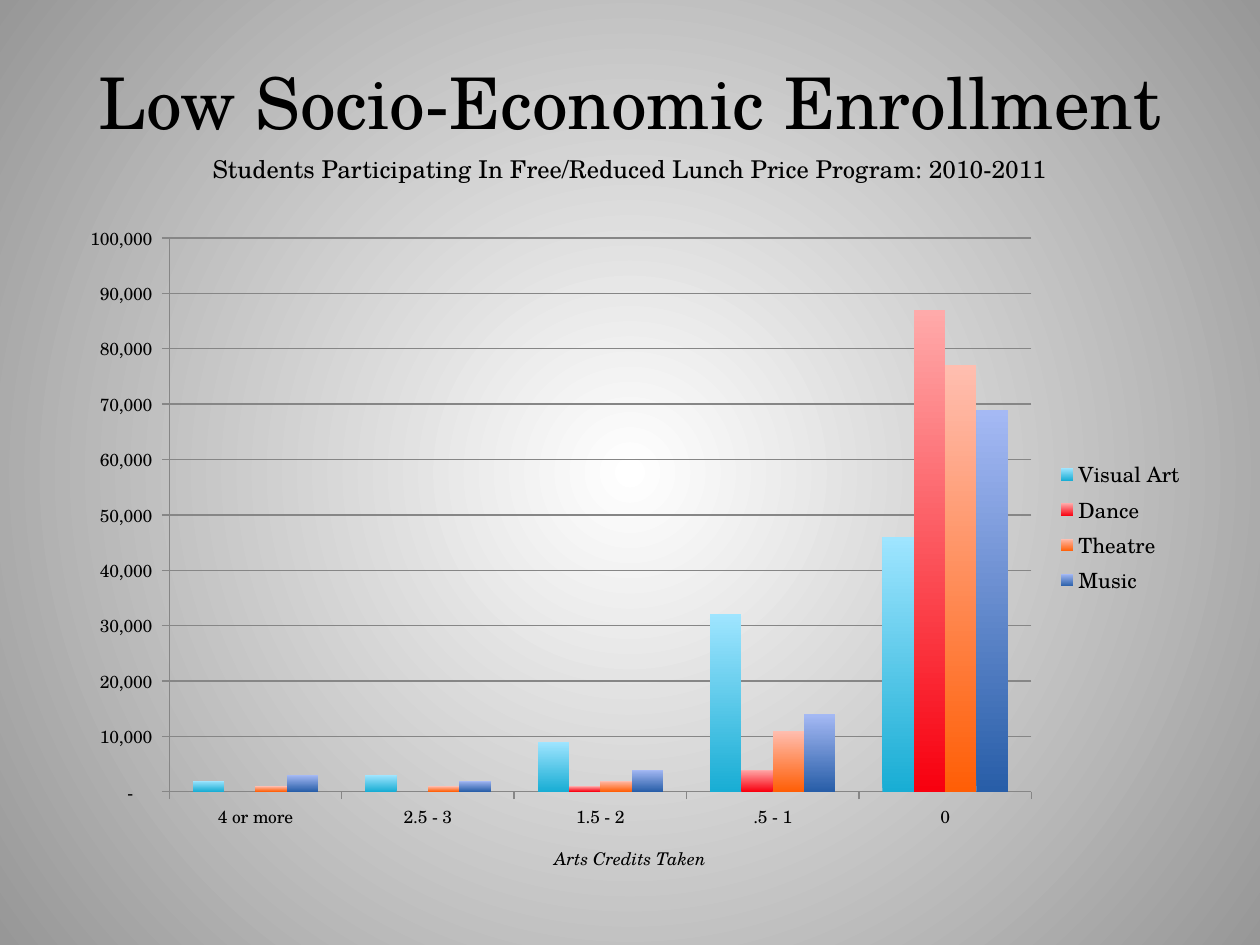
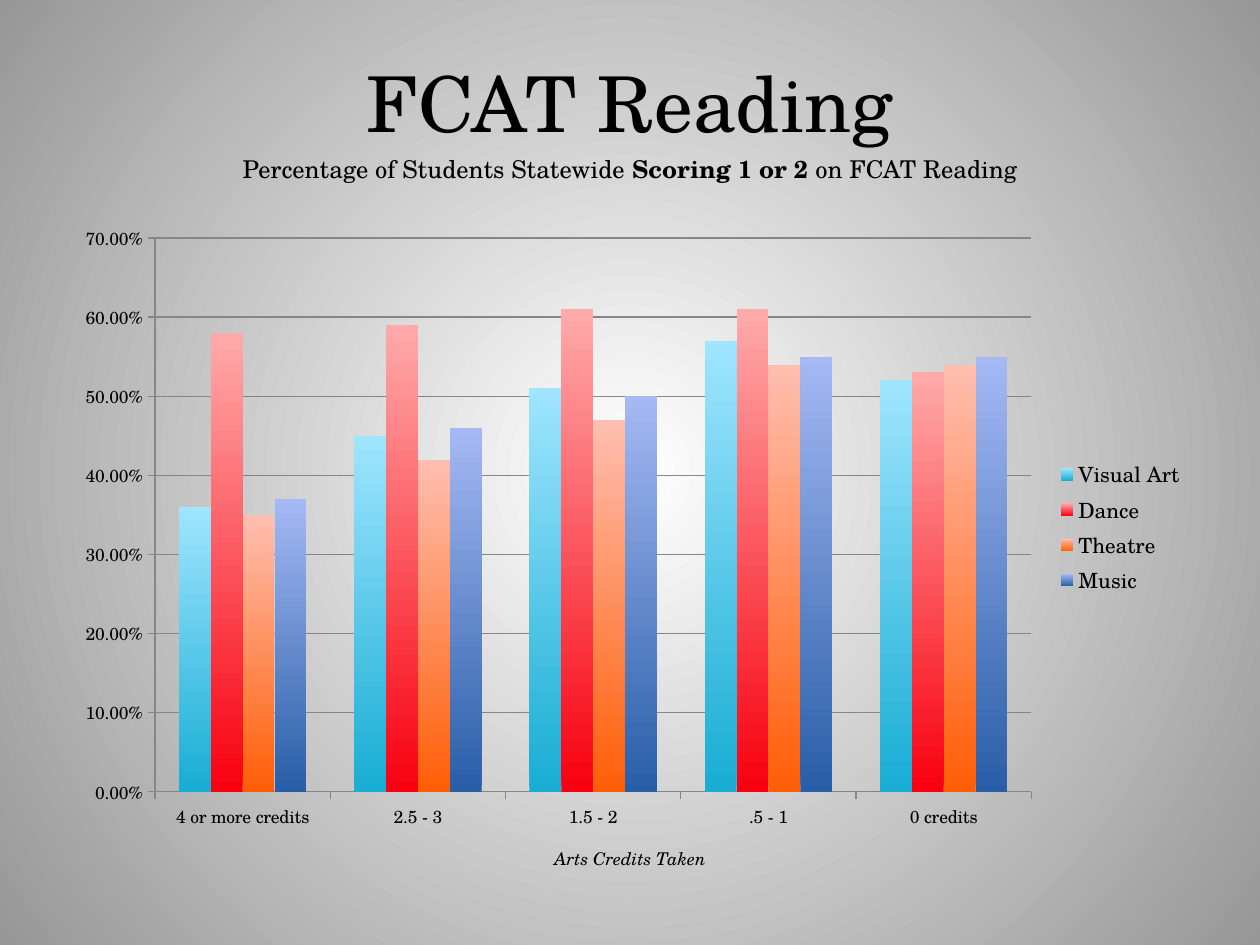
from pptx import Presentation
from pptx.chart.data import CategoryChartData as ChartData
from pptx.dml.color import RGBColor as Color
from pptx.enum.chart import XL_CHART_TYPE as ChartType
from pptx.enum.chart import XL_LEGEND_POSITION as LegendPosition
from pptx.enum.chart import XL_TICK_MARK as TickMark
from pptx.enum.text import MSO_ANCHOR as Anchor
from pptx.enum.text import PP_ALIGN as Align
from pptx.oxml import parse_xml
from pptx.oxml.ns import nsdecls
from pptx.util import Inches, Pt

FONT = "TeX Gyre Schola"
COLORS = {"text": "000000", "line": "868686", "center": "FFFFFF", "edge": "979797"}
# Bottom and top colour of the columns of each art
ART_COLORS = {
    "Visual Art": ("18ADD4", "9FE5FF"),
    "Dance": ("F8000F", "FFAAAA"),
    "Theatre": ("FF5E06", "FFBEB0"),
    "Music": ("285EA8", "A5B9F4"),
}


class ChartDeck:
    """Holds the shared style and the current slide."""

    def __init__(self):
        self.deck = Presentation()
        self.deck.slide_width = Inches(10)
        self.deck.slide_height = Inches(7.5)
        self.page = None

    def add_page(self):
        self.page = self.deck.slides.add_slide(self.deck.slide_layouts[6])
        background = parse_xml(
            f'<p:bg {nsdecls("p", "a")}><p:bgPr><a:gradFill rotWithShape="1"><a:gsLst>'
            f'<a:gs pos="0"><a:srgbClr val="{COLORS["center"]}"/></a:gs>'
            f'<a:gs pos="100000"><a:srgbClr val="{COLORS["edge"]}"/></a:gs></a:gsLst>'
            '<a:path path="circle"><a:fillToRect l="50000" t="50000" r="50000" b="50000"/>'
            "</a:path></a:gradFill><a:effectLst/></p:bgPr></p:bg>"
        )
        self.page.element.cSld.insert(0, background)

    def style_font(self, font, size):
        font.name = FONT
        font.size = Pt(size)
        font.color.rgb = Color.from_string(COLORS["text"])

    def add_text(self, spans, left, top, width, height, size,
                 anchor=Anchor.TOP, italic=None):
        """Add one centred paragraph; spans are (text, bold) pairs."""
        box = self.page.shapes.add_textbox(
            Inches(left), Inches(top), Inches(width), Inches(height))
        frame = box.text_frame
        frame.word_wrap = True
        frame.vertical_anchor = anchor
        para = frame.paragraphs[0]
        para.alignment = Align.CENTER
        for text, bold in spans:
            span = para.add_run()
            span.text = text
            self.style_font(span.font, size)
            span.font.bold = bold
            span.font.italic = italic

    def add_heading(self, title, title_size, subtitle, subtitle_height):
        self.add_text([(title, False)], 0.5, 0.18, 9, 1.25, title_size, Anchor.MIDDLE)
        self.add_text(subtitle, 0.5, 1.17, 9, subtitle_height, 14)

    def style_axis(self, axis):
        self.style_font(axis.tick_labels.font, 10)
        axis.major_tick_mark = TickMark.OUTSIDE
        axis.minor_tick_mark = TickMark.NONE
        axis.format.line.color.rgb = Color.from_string(COLORS["line"])

    def add_columns(self, categories, values, number_format, maximum, step):
        data = ChartData(number_format=number_format)
        data.categories = categories
        for art, art_values in zip(ART_COLORS, values):
            data.add_series(art, art_values)
        chart = self.page.shapes.add_chart(
            ChartType.COLUMN_CLUSTERED, Inches(0.5), Inches(1.69),
            Inches(9), Inches(4.99), data).chart
        chart.has_title = False
        self.style_font(chart.font, 18)

        # Axes
        self.style_axis(chart.category_axis)
        axis = chart.value_axis
        self.style_axis(axis)
        axis.minimum_scale, axis.maximum_scale, axis.major_unit = 0, maximum, step
        axis.has_major_gridlines = True
        axis.major_gridlines.format.line.color.rgb = Color.from_string(COLORS["line"])
        axis.tick_labels.number_format = number_format
        axis.tick_labels.number_format_is_linked = False

        # Legend
        chart.has_legend = True
        chart.legend.position = LegendPosition.RIGHT
        chart.legend.include_in_layout = False
        self.style_font(chart.legend.font, 12)

        # Columns
        plot = chart.plots[0]
        plot.vary_by_categories = False
        plot.gap_width = 150
        plot.overlap = 0
        for series in plot.series:
            fill = series.format.fill
            fill.gradient()
            fill.gradient_angle = 90
            for stop, color in zip(fill.gradient_stops, ART_COLORS[series.name]):
                stop.color.rgb = Color.from_string(color)

        # Caption of the category axis
        self.add_text([("Arts Credits Taken", False)], 3.26, 6.68, 3.48, 0.27, 10,
                      italic=True)


def main():
    show = ChartDeck()

    # Enrollment
    show.add_page()
    show.add_heading(
        "Low Socio-Economic Enrollment", 40.7,
        [("Students Participating In Free/Reduced Lunch Price Program: 2010-2011", False)],
        0.34)
    show.add_columns(
        ["4 or more", "2.5 - 3", "1.5 - 2", ".5 - 1", "0"],
        [(2000, 3000, 9000, 32000, 46000),
         (0, 0, 1000, 4000, 87000),
         (1000, 1000, 2000, 11000, 77000),
         (3000, 2000, 4000, 14000, 69000)],
        r'_(* #,##0_);_(* \(#,##0\);_(* "-"??_);_(', 100000, 10000)

    # Reading scores
    show.add_page()
    show.add_heading(
        "FCAT Reading", 44,
        [("Percentage of Students Statewide ", False), ("Scoring 1 or 2 ", True),
         ("on FCAT Reading", False)],
        0.57)
    show.add_columns(
        ["4 or more credits", "2.5 - 3", "1.5 - 2", ".5 - 1", "0 credits"],
        [(0.36, 0.45, 0.51, 0.57, 0.52),
         (0.58, 0.59, 0.61, 0.61, 0.53),
         (0.35, 0.42, 0.47, 0.54, 0.54),
         (0.37, 0.46, 0.5, 0.55, 0.55)],
        "0.00%", 0.7, 0.1)

    show.deck.save("out.pptx")


if __name__ == "__main__":
    main()
